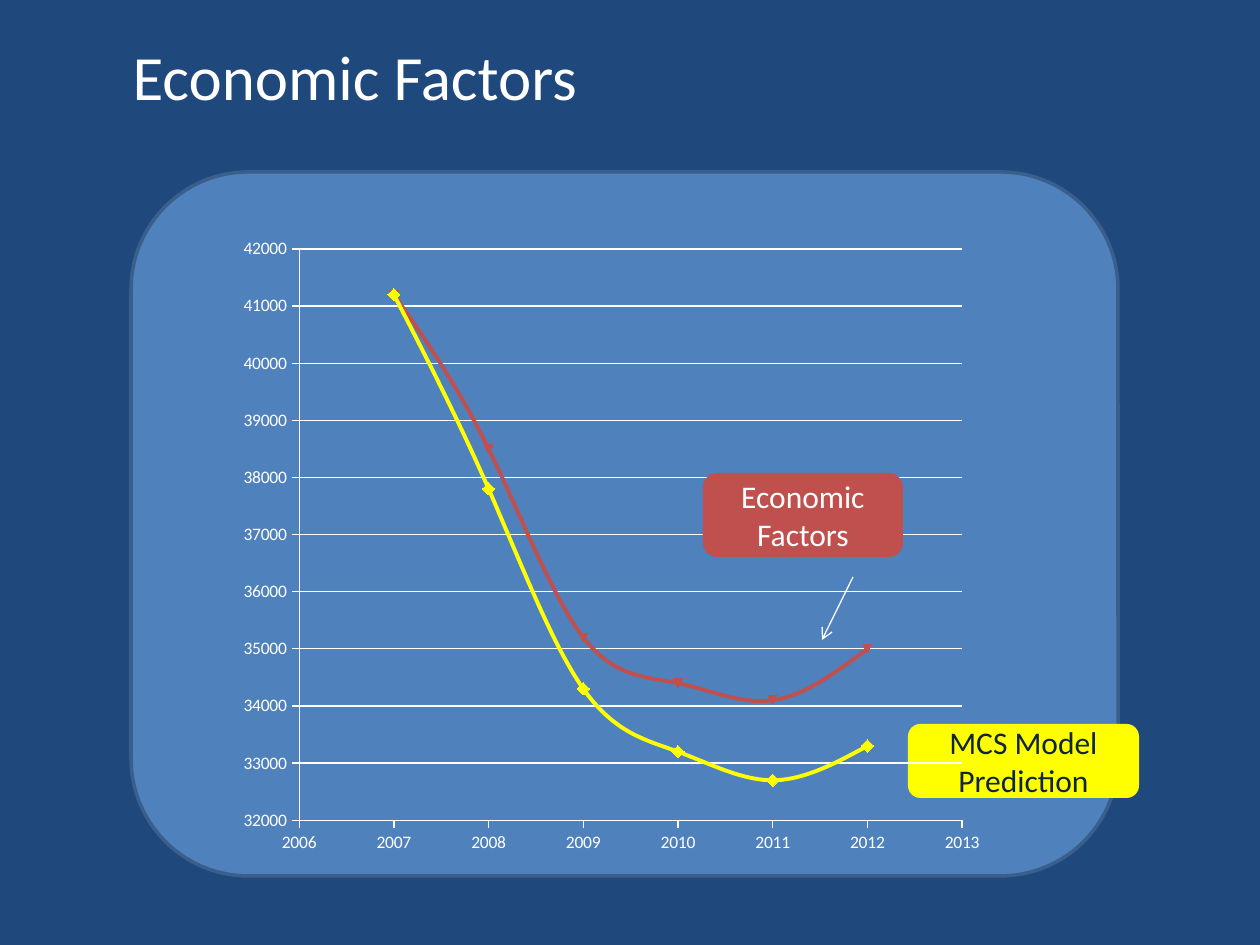
from lxml.etree import SubElement
from pptx import Presentation
from pptx.chart.data import XyChartData
from pptx.dml.color import RGBColor as Rgb
from pptx.enum.chart import XL_CHART_TYPE as Kind, XL_MARKER_STYLE as Mark, XL_TICK_MARK as Tick
from pptx.enum.shapes import MSO_CONNECTOR as Link, MSO_SHAPE as Form
from pptx.enum.text import MSO_ANCHOR as Anchor, PP_ALIGN as Align
from pptx.oxml import parse_xml
from pptx.oxml.ns import nsdecls, qn
from pptx.util import Emu, Pt

FONT = "Calibri"
HUES = {"back": "1F497D", "panel": "4F81BD", "edge": "3A5F8C", "white": "FFFFFF",
        "model": "FFFF00", "factor": "C0504D", "dark": "0F243E"}
YEARS = range(2007, 2013)
MODEL = (41200, 37800, 34300, 33200, 32700, 33300)
FACTOR = (41200, 38500, 35200, 34400, 34100, 35000)


def px(*nums):
    """Turn pixel lengths into EMU."""
    return [Emu(round(num * 914400 / 126)) for num in nums]


def hue(name):
    """Look up a colour by name."""
    return Rgb.from_string(HUES[name])


def style(font, size, color):
    """Set face, size and colour of a font."""
    font.name, font.size = FONT, Pt(size)
    font.color.rgb = hue(color)


def paint(fill, color):
    """Fill with one solid colour."""
    fill.solid()
    fill.fore_color.rgb = hue(color)


def stroke(line, color, width):
    """Set colour and width of a line."""
    line.color.rgb, line.width = hue(color), Pt(width)


def write(shape, text, size=18, color="white", align=Align.CENTER, anchor=Anchor.MIDDLE):
    """Put formatted text into a shape, one paragraph a line."""
    frame = shape.text_frame
    frame.word_wrap, frame.vertical_anchor = True, anchor
    frame.text = text
    for para in frame.paragraphs:
        para.alignment = align
        style(para.runs[0].font, size, color)


def add_title(slide, text, box):
    """Place and fill the title."""
    title = slide.shapes.title
    title.left, title.top, title.width, title.height = px(*box)
    write(title, text, size=36, align=Align.LEFT, anchor=Anchor.TOP)


def add_box(slide, box, color, edge=None):
    """Add a rounded box."""
    shape = slide.shapes.add_shape(Form.ROUNDED_RECTANGLE, *px(*box))
    shape.shadow.inherit = False
    paint(shape.fill, color)
    if edge:
        stroke(shape.line, edge, 2)
    else:
        shape.line.fill.background()
    return shape


def add_arrow(slide, ends):
    """Add a thin white arrow."""
    arrow = slide.shapes.add_connector(Link.STRAIGHT, *px(*ends))
    stroke(arrow.line, "white", 0.75)
    SubElement(arrow.line._get_or_add_ln(), qn("a:tailEnd"), type="arrow")
    SubElement(arrow._element.spPr, qn("a:effectLst"))


def set_axis(axis, low, high, step):
    """Scale and colour one axis."""
    axis.minimum_scale, axis.maximum_scale, axis.major_unit = low, high, step
    axis.major_tick_mark, axis.minor_tick_mark = Tick.OUTSIDE, Tick.NONE
    axis.tick_labels.number_format = "0"
    axis.tick_labels.number_format_is_linked = False
    style(axis.tick_labels.font, 10, "white")
    stroke(axis.format.line, "white", 0.75)


def set_plot(chart, **sides):
    """Fix the inner plot area as shares of the chart."""
    area = chart._chartSpace.chart.plotArea
    for old in area.findall(qn("c:layout")):
        area.remove(old)
    rows = "".join(f'<c:{side} val="{val}"/>' for side, val in sides.items())
    area.insert(0, parse_xml(
        f'<c:layout {nsdecls("c")}><c:manualLayout><c:layoutTarget val="inner"/>'
        f'<c:xMode val="edge"/><c:yMode val="edge"/>{rows}</c:manualLayout></c:layout>'))


def add_plot(slide, box):
    """Add the smooth scatter chart."""
    data = XyChartData()
    for name, vals in (("Series 1", MODEL), ("Series 2", FACTOR)):
        row = data.add_series(name)
        for year, val in zip(YEARS, vals):
            row.add_data_point(year, val)
    chart = slide.shapes.add_chart(Kind.XY_SCATTER_SMOOTH, *px(*box), data).chart
    chart.has_legend = chart.has_title = False
    style(chart.font, 10, "white")
    set_axis(chart.category_axis, 2006, 2013, 1)
    set_axis(chart.value_axis, 32000, 42000, 1000)
    chart.category_axis.has_major_gridlines = False
    chart.value_axis.has_major_gridlines = True
    stroke(chart.value_axis.major_gridlines.format.line, "white", 0.75)
    set_plot(chart, x=0.09, y=0.044, w=0.85, h=0.9)
    plot = chart.plots[0]
    plot.vary_by_categories = False
    looks = (("model", Mark.DIAMOND, 7), ("factor", None, 5))
    for row, (color, mark, size) in zip(plot.series, looks):
        row._element.get_or_add_smooth().val = True
        stroke(row.format.line, color, 2.25)
        row.marker.style, row.marker.size = mark, size
        paint(row.marker.format.fill, color)
        stroke(row.marker.format.line, color, 0.75)


def main():
    """Build and save the slide."""
    deck = Presentation()
    deck.slide_width, deck.slide_height = px(1260, 945)
    slide = deck.slides.add_slide(deck.slide_layouts[5])
    paint(slide.background.fill, "back")
    add_title(slide, "Economic Factors", (120, 31, 998, 90))
    add_box(slide, (131, 172, 987, 704), "panel", edge="edge")
    model = add_box(slide, (908, 724, 231, 74), "model")
    write(model, "MCS Model\nPrediction", color="dark")
    add_arrow(slide, (853, 577, 822, 640))
    add_plot(slide, (229, 221, 780, 635))
    factor = add_box(slide, (703, 473, 200, 84), "factor")
    write(factor, "Economic Factors")
    deck.save("out.pptx")


if __name__ == "__main__":
    main()
